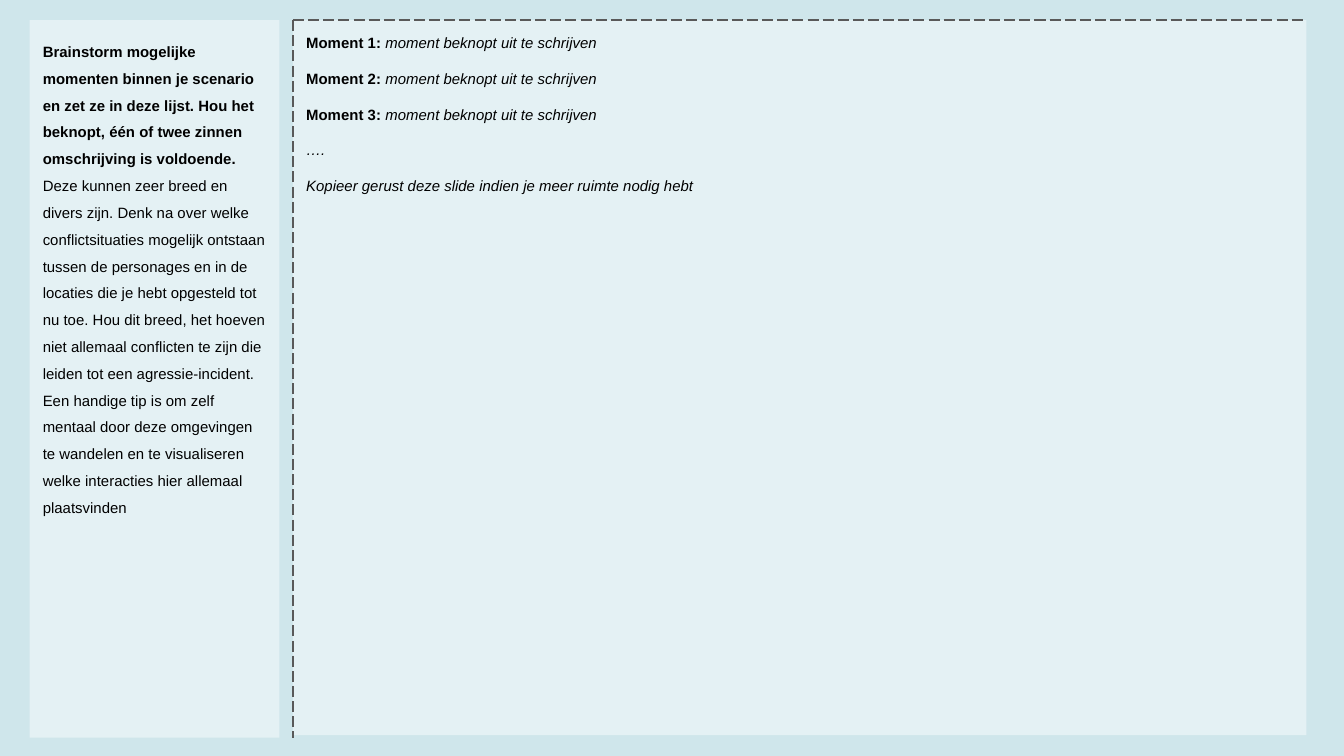
"""Builds a brainstorm slide with an instruction sidebar and a list of moments."""
from dataclasses import dataclass

from lxml.etree import SubElement
from pptx import Presentation
from pptx.dml.color import RGBColor as RGB
from pptx.enum.dml import MSO_LINE_DASH_STYLE as DASH
from pptx.enum.shapes import MSO_CONNECTOR as CONN, MSO_SHAPE as SHAPE
from pptx.enum.text import MSO_ANCHOR as ANCHOR, PP_ALIGN as ALIGN
from pptx.oxml.ns import qn
from pptx.util import Inches, Pt


@dataclass(frozen=True)
class Theme:
    background: RGB = RGB(0xCF, 0xE6, 0xEB)
    panel: RGB = RGB(0xFF, 0xFF, 0xFF)
    panel_alpha: int = 45000
    text: RGB = RGB(0, 0, 0)
    rule: RGB = RGB(0x59, 0x59, 0x59)
    font: str = "Arial"
    body_size: float = 8
    rule_width: float = 0.75


class SlideBuilder:
    def __init__(self, s, theme):
        self.s = s
        self.theme = theme
        fill = s.background.fill
        fill.solid()
        fill.fore_color.rgb = theme.background

    def panel(self, left, top, width, height, paragraphs, line_spacing, space_after):
        sp = self.s.shapes.add_shape(
            SHAPE.RECTANGLE, Inches(left), Inches(top), Inches(width), Inches(height))
        sp.shadow.inherit = False
        sp.line.fill.background()
        sp.fill.solid()
        sp.fill.fore_color.rgb = self.theme.panel
        color = sp._element.spPr.find(qn("a:solidFill"))[0]
        SubElement(color, qn("a:alpha"), val=str(self.theme.panel_alpha))
        tf = sp.text_frame
        tf.word_wrap = True
        tf.vertical_anchor = ANCHOR.TOP
        tf.margin_left = tf.margin_right = tf.margin_top = tf.margin_bottom = Inches(0.1)
        for i, runs in enumerate(paragraphs):
            p = tf.add_paragraph() if i else tf.paragraphs[0]
            p.alignment = ALIGN.LEFT
            p.line_spacing = line_spacing
            p.space_after = Pt(space_after)
            for text, bold, italic in runs:
                self.run(p, text, bold, italic)

    def run(self, p, text, bold, italic):
        r = p.add_run()
        r.text = text
        r.font.name = self.theme.font
        r.font.size = Pt(self.theme.body_size)
        r.font.color.rgb = self.theme.text
        r.font.bold = bold
        r.font.italic = italic

    def dashed_rule(self, x1, y1, x2, y2):
        line = self.s.shapes.add_connector(
            CONN.STRAIGHT, Inches(x1), Inches(y1), Inches(x2), Inches(y2))
        line.line.color.rgb = self.theme.rule
        line.line.width = Pt(self.theme.rule_width)
        line.line.dash_style = DASH.LONG_DASH
        SubElement(line._element.spPr, qn("a:effectLst"))


INSTRUCTION = (
    "Brainstorm mogelijke momenten binnen je scenario en zet ze in deze lijst. "
    "Hou het beknopt, één of twee zinnen omschrijving is voldoende. ")
EXPLANATION = (
    "Deze kunnen zeer breed en divers zijn. Denk na over welke conflictsituaties "
    "mogelijk ontstaan tussen de personages en in de locaties die je hebt opgesteld "
    "tot nu toe. Hou dit breed, het hoeven niet allemaal conflicten te zijn die leiden "
    "tot een agressie-incident. Een handige tip is om zelf mentaal door deze omgevingen "
    "te wandelen en te visualiseren welke interacties hier allemaal plaatsvinden")
CLOSING = ["….", "Kopieer gerust deze slide indien je meer ruimte nodig hebt"]


def main():
    prs = Presentation()
    prs.slide_width, prs.slide_height = Inches(10), Inches(10 * 9 / 16)
    slide = SlideBuilder(prs.slides.add_slide(prs.slide_layouts[6]), Theme())

    top, bottom = 0.15, 5.49
    list_left, list_width = 2.18, 7.54
    moments = [[(f"Moment {n}: ", True, False),
                ("moment beknopt uit te schrijven", False, True)] for n in range(1, 4)]
    moments += [[(text, False, True)] for text in CLOSING]

    slide.panel(0.22, top, 1.86, bottom - top,
                [[(INSTRUCTION, True, False), (EXPLANATION, False, False)]], 1.5, 12)
    slide.panel(list_left, top, list_width, 5.32, moments, 1.0, 9.6)
    slide.dashed_rule(list_left, top, list_left, bottom)
    slide.dashed_rule(list_left, top, list_left + list_width, top)
    prs.save("out.pptx")


if __name__ == "__main__":
    main()
